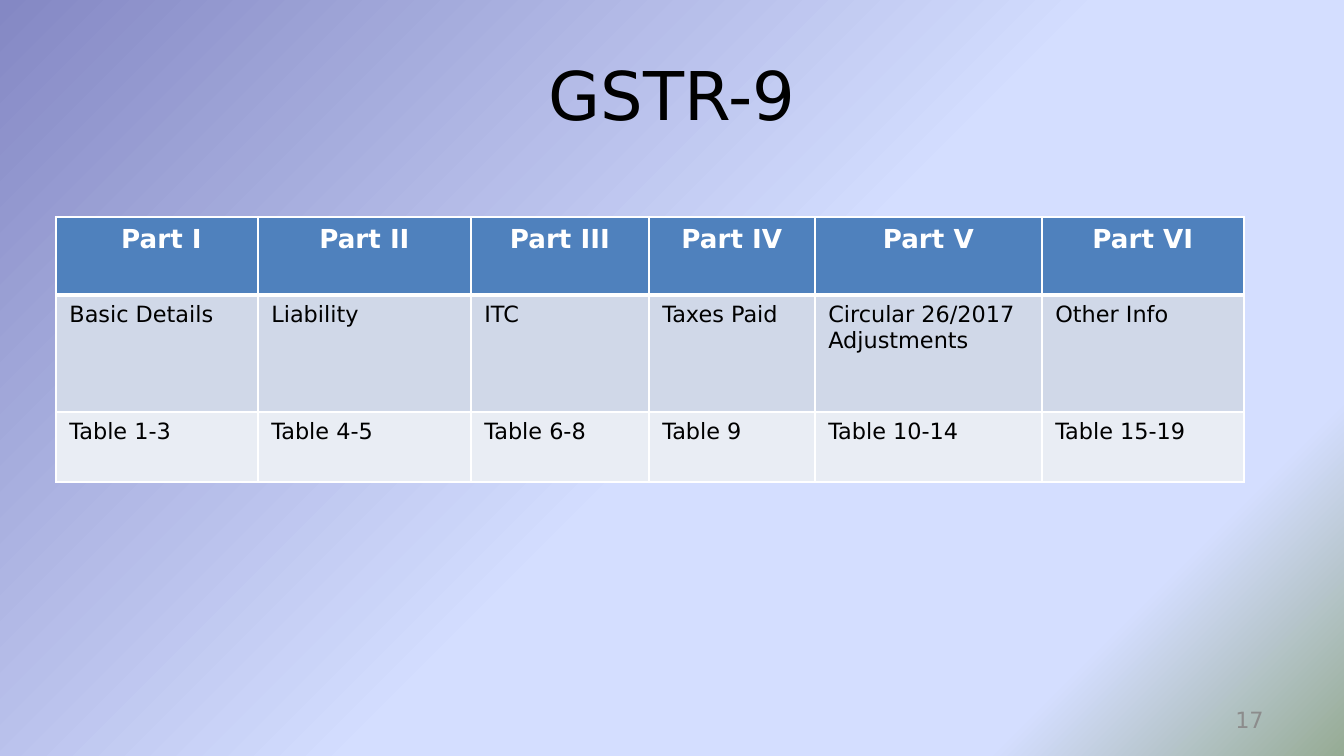
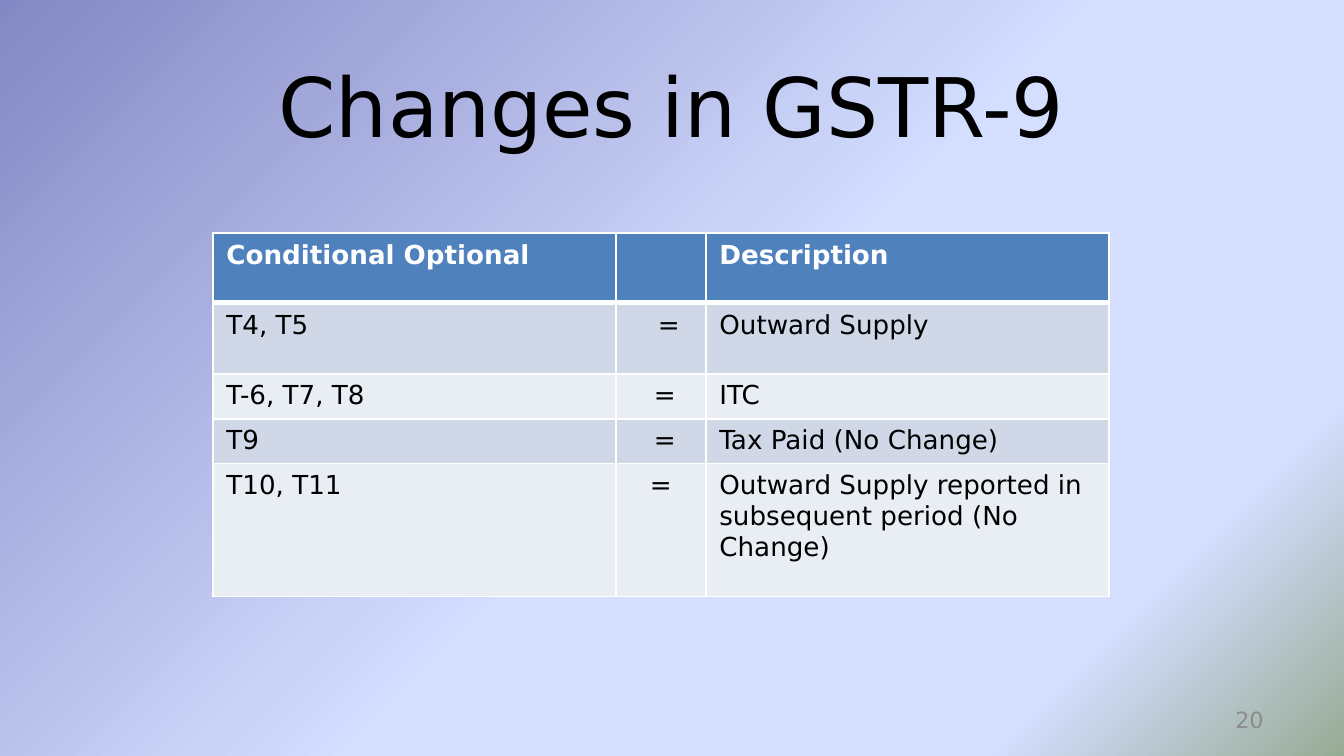
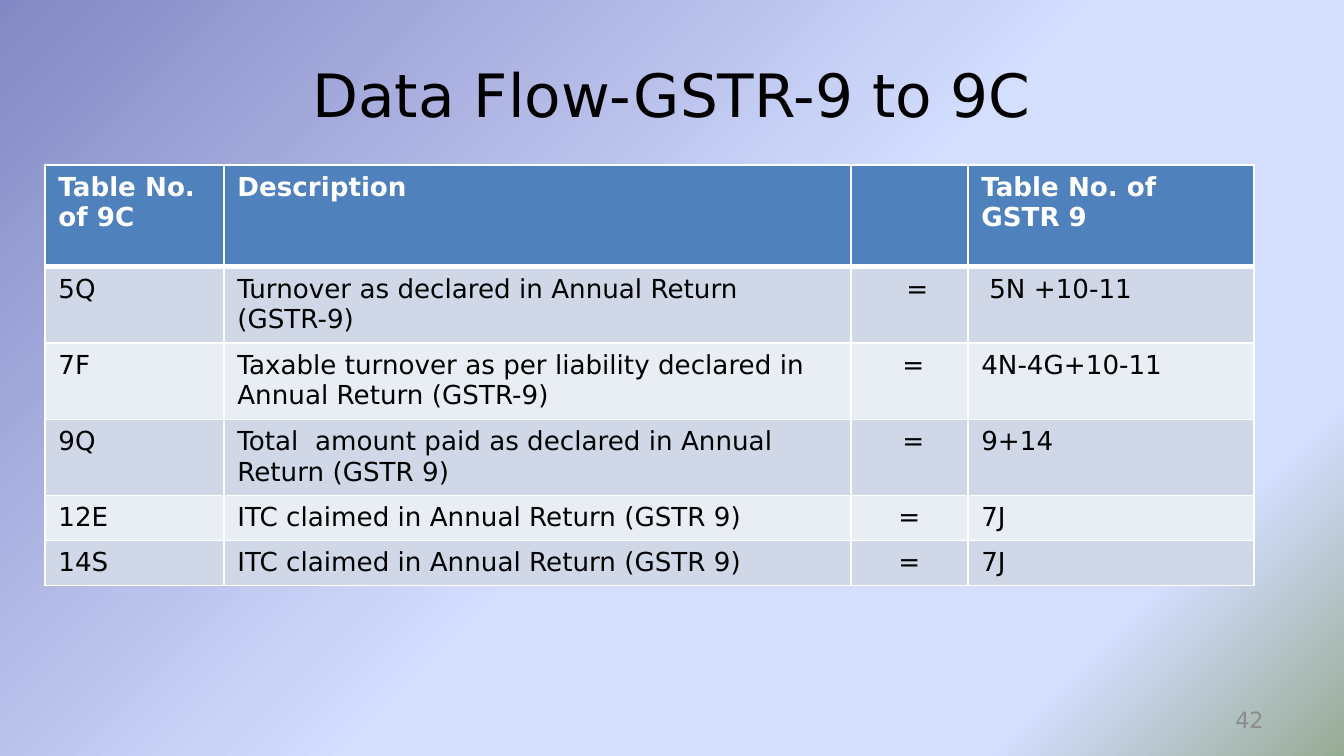
from lxml import etree
from copy import deepcopy
from pptx import Presentation
from pptx.dml.color import RGBColor
from pptx.enum.text import MSO_ANCHOR, PP_ALIGN
from pptx.oxml.ns import qn
from pptx.util import Emu, Pt

LEFT, CENTER, RIGHT = PP_ALIGN.LEFT, PP_ALIGN.CENTER, PP_ALIGN.RIGHT
MIDDLE = MSO_ANCHOR.MIDDLE
EMU_PER_PX = 914400 / 134.4
FONT = "DejaVu Sans"
BLACK, WHITE, GRAY = "000000", "FFFFFF", "8C8C8C"
HEADER_FILL = "4F81BD"
BAND_FILLS = ["D0D8E8", "E9EDF4"]
BACKGROUND_STOPS = [(0, "8488C4"), (0.53, "D4DEFF"), (0.83, "D4DEFF"), (1, "96AB94")]
THIN, THICK = 1, 3


def px(length):
    return Emu(round(length * EMU_PER_PX))


def color(value):
    return RGBColor.from_string(value)


def write(frame, text, size=14, ink=BLACK, bold=False, align=LEFT, indent=0):
    para = frame.paragraphs[0]
    para.alignment = align
    if indent:
        properties = para._p.get_or_add_pPr()
        properties.set("marL", str(px(indent)))
        properties.set("indent", "0")
    span = para.add_run()
    span.text = text
    span.font.name = FONT
    span.font.size = Pt(size)
    span.font.bold = bold
    span.font.color.rgb = color(ink)


def draw_border(cell, side, points):
    properties = cell._tc.get_or_add_tcPr()
    line = etree.SubElement(properties, qn(f"a:ln{side}"), w=str(Pt(points)))
    fill = etree.SubElement(line, qn("a:solidFill"))
    etree.SubElement(fill, qn("a:srgbClr"), val=WHITE)


class Slides:
    def __init__(self):
        self.deck = Presentation()
        self.deck.slide_width, self.deck.slide_height = px(1344), px(756)
        self.page = None
        self.paint_background()

    def paint_background(self):
        master = self.deck.slide_master
        fill = master.background.fill
        fill.gradient()
        fill.gradient_angle = 315
        stop_list = master.element.xpath(".//p:bg//a:gsLst")[0]
        while len(stop_list) < len(BACKGROUND_STOPS):
            stop_list.append(deepcopy(stop_list[0]))
        for stop, (position, value) in zip(fill.gradient_stops, BACKGROUND_STOPS):
            stop.position = position
            stop.color.rgb = color(value)

    def add_page(self, title, number, size, title_top=31):
        self.page = self.deck.slides.add_slide(self.deck.slide_layouts[6])
        self.text(title, 67, title_top, 1210, 126, size=size, align=CENTER)
        self.text(number, 964, 700, 313, 40, size=12, ink=GRAY, align=RIGHT)

    def text(self, text, left, top, width, height, **style):
        box = self.page.shapes.add_textbox(px(left), px(top), px(width), px(height))
        box.text_frame.word_wrap = True
        box.text_frame.vertical_anchor = MIDDLE
        write(box.text_frame, text, **style)

    def table(self, left, top, widths, heights, rows, body_size=14,
              header_align=LEFT, centered_column=None):
        table = self.page.shapes.add_table(
            len(rows), len(widths), px(left), px(top),
            px(sum(widths)), px(sum(heights))).table
        table.first_row = table.horz_banding = False
        for column, width in zip(table.columns, widths):
            column.width = px(width)
        for row, height in zip(table.rows, heights):
            row.height = px(height)
        for row_index, entries in enumerate(rows):
            header = row_index == 0
            for column_index, entry in enumerate(entries):
                text, indent = entry if isinstance(entry, tuple) else (entry, 0)
                cell = table.cell(row_index, column_index)
                self.style_cell(cell, row_index)
                if not text:
                    continue
                if header:
                    write(cell.text_frame, text, ink=WHITE, bold=True,
                          align=header_align, indent=indent)
                else:
                    align = CENTER if column_index == centered_column else LEFT
                    write(cell.text_frame, text, size=body_size,
                          align=align, indent=indent)

    def style_cell(self, cell, row_index):
        top = THICK if row_index == 1 else THIN
        bottom = THICK if row_index == 0 else THIN
        for side, points in zip("LRTB", (THIN, THIN, top, bottom)):
            draw_border(cell, side, points)
        cell.fill.solid()
        band = BAND_FILLS[(row_index - 1) % 2]
        cell.fill.fore_color.rgb = color(band if row_index else HEADER_FILL)


def main():
    slides = Slides()

    slides.add_page("GSTR-9", "17", size=36)
    slides.table(56, 217, [202, 213, 178, 166, 227, 202], [78, 117, 70], [
        [("Part I", 9), "Part II", "Part III", "Part IV", "Part V", "Part VI"],
        ["Basic Details", "Liability", "ITC", "Taxes Paid",
         "Circular 26/2017 Adjustments", "Other Info"],
        ["Table 1-3", "Table 4-5", "Table 6-8", "Table 9", "Table 10-14", "Table 15-19"],
    ], body_size=12, header_align=CENTER)

    slides.add_page("Changes in GSTR-9", "20", size=44, title_top=42)
    slides.table(213, 233, [403, 90, 403], [70, 71, 41, 41, 133], [
        ["Conditional Optional", "", "Description"],
        ["T4, T5", ("=", 16), "Outward Supply"],
        ["T-6, T7, T8", ("=", 8), "ITC"],
        ["T9", ("=", 8), "Tax Paid (No Change)"],
        ["T10, T11", "=", "Outward Supply reported in subsequent period (No Change)"],
    ], centered_column=1)

    slides.add_page("Data Flow-GSTR-9 to 9C", "42", size=32)
    slides.table(45, 165, [179, 627, 117, 286], [102, 72, 71, 72, 41, 41], [
        ["Table No. of 9C", "Description", "", "Table No. of GSTR 9"],
        ["5Q", "Turnover as declared in Annual Return (GSTR-9)",
         ("=", 16), ("5N +10-11", 8)],
        ["7F", "Taxable turnover as per liability declared in Annual Return (GSTR-9)",
         ("=", 8), "4N-4G+10-11"],
        ["9Q", "Total  amount paid as declared in Annual Return (GSTR 9)",
         ("=", 8), "9+14"],
        ["12E", "ITC claimed in Annual Return (GSTR 9)", "=", "7J"],
        ["14S", "ITC claimed in Annual Return (GSTR 9)", "=", "7J"],
    ], centered_column=2)

    slides.deck.save("out.pptx")


if __name__ == "__main__":
    main()
